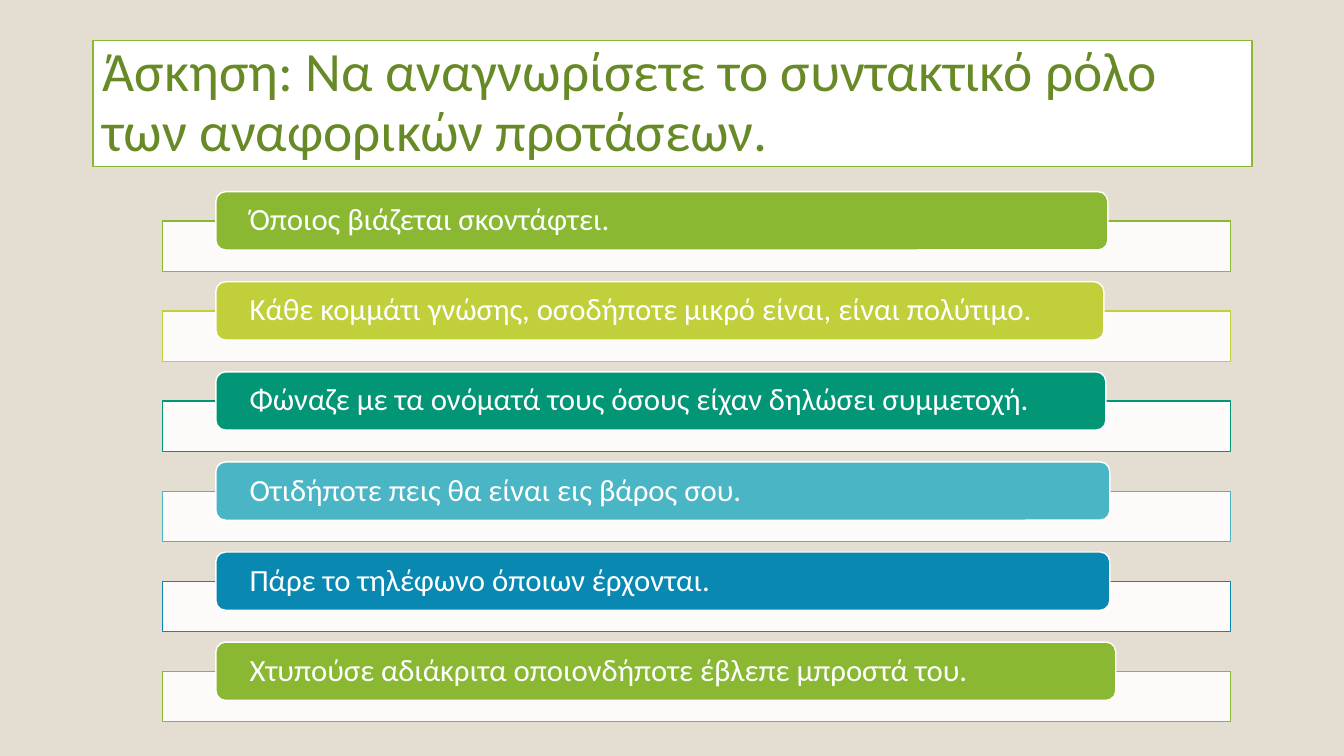
from lxml import etree
from pptx import Presentation
from pptx.dml.color import RGBColor
from pptx.enum import shapes, text
from pptx.oxml.ns import qn
from pptx.util import Cm, Pt

HEADING = "Άσκηση: Να αναγνωρίσετε το συντακτικό ρόλο των αναφορικών προτάσεων."
# sentence, accent, label width in cm
SENTENCES = [
    ("Όποιος βιάζεται σκοντάφτει.", "green", 22.48),
    ("Κάθε κομμάτι γνώσης, οσοδήποτε μικρό είναι, είναι πολύτιμο.", "lime", 22.38),
    ("Φώναζε με τα ονόματά τους όσους είχαν δηλώσει συμμετοχή.", "teal", 22.43),
    ("Οτιδήποτε πεις θα είναι εις βάρος σου.", "aqua", 22.53),
    ("Πάρε το τηλέφωνο όποιων έρχονται.", "blue", 22.53),
    ("Χτυπούσε αδιάκριτα οποιονδήποτε έβλεπε μπροστά του.", "green", 22.68),
]
THEME = {
    "font": "Calibri", "heading_size": 39.6, "sentence_size": 22,
    "background": "E3DED1", "heading": "678A26", "white": "FFFFFF",
    "green": "8AB833", "lime": "C0CF3A", "teal": "029676",
    "aqua": "4AB5C4", "blue": "0989B1",
}
LABEL_LEFT, LABEL_TOP, LABEL_HEIGHT = 5.44, 4.83, 1.47
BAR_LEFT, BAR_DROP, BAR_WIDTH, BAR_HEIGHT = 4.09, 0.74, 26.92, 1.27
ROW_PITCH = 2.27


def colour(name):
    return RGBColor.from_string(THEME[name])


def add_panel(slide, kind, box, fill, line):
    panel = slide.shapes.add_shape(kind, *map(Cm, box))
    panel.shadow.inherit = False
    panel.fill.solid()
    panel.fill.fore_color.rgb = colour(fill)
    panel.line.color.rgb = colour(line)
    panel.line.width = Pt(1)
    return panel


def write(panel, words, size, ink, side, edge):
    """Left-align words in a panel; side and edge are its insets in cm."""
    frame = panel.text_frame
    frame_format = {
        "word_wrap": True, "vertical_anchor": text.MSO_ANCHOR.MIDDLE,
        "margin_left": Cm(side), "margin_right": Cm(side),
        "margin_top": Cm(edge), "margin_bottom": Cm(edge),
    }
    for name, value in frame_format.items():
        setattr(frame, name, value)
    paragraph = frame.paragraphs[0]
    paragraph.alignment = text.PP_ALIGN.LEFT
    paragraph.line_spacing = 0.9
    run = paragraph.add_run()
    run.text = words
    font_format = {"name": THEME["font"], "size": Pt(THEME[size])}
    for name, value in font_format.items():
        setattr(run.font, name, value)
    run.font.color.rgb = colour(ink)


def set_opacity(panel, percent):
    tint = panel.fill._xPr.find(qn("a:solidFill"))[0]
    etree.SubElement(tint, qn("a:alpha")).set("val", str(percent * 1000))


def add_sentence(slide, row, sentence, accent, width):
    top = LABEL_TOP + row * ROW_PITCH
    bar = add_panel(slide, shapes.MSO_SHAPE.RECTANGLE,
                    (BAR_LEFT, top + BAR_DROP, BAR_WIDTH, BAR_HEIGHT),
                    "white", accent)
    set_opacity(bar, 90)
    label = add_panel(slide, shapes.MSO_SHAPE.ROUNDED_RECTANGLE,
                      (LABEL_LEFT, top, width, LABEL_HEIGHT), accent, "white")
    write(label, sentence, "sentence_size", "white", 0.78, 0)


def main():
    deck = Presentation()
    deck.slide_width, deck.slide_height = Cm(33.87), Cm(19.05)
    slide = deck.slides.add_slide(deck.slide_layouts[6])
    slide.background.fill.solid()
    slide.background.fill.fore_color.rgb = colour("background")

    heading = add_panel(slide, shapes.MSO_SHAPE.RECTANGLE,
                        (2.34, 1.02, 29.21, 3.18), "white", "green")
    write(heading, HEADING, "heading_size", "heading", 0.25, 0.13)
    for row, entry in enumerate(SENTENCES):
        add_sentence(slide, row, *entry)
    deck.save("out.pptx")


if __name__ == "__main__":
    main()
